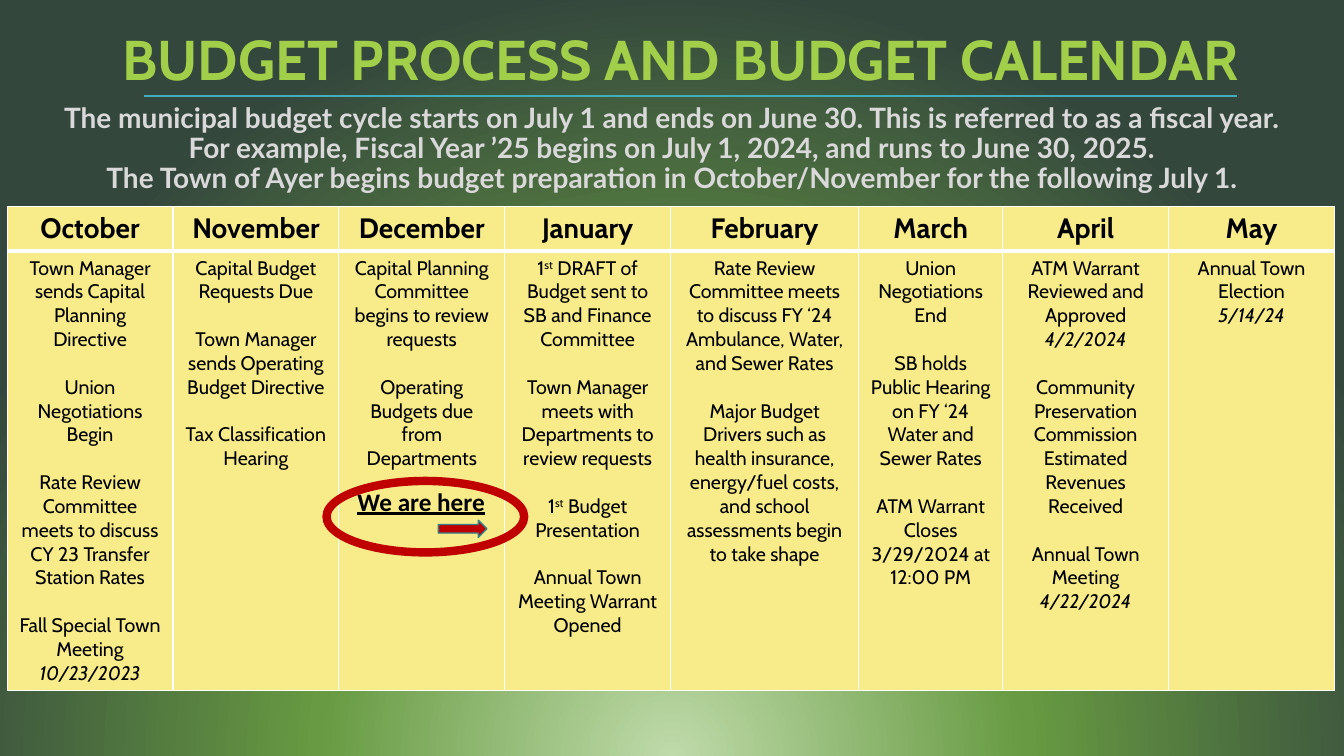
from itertools import product

from pptx import Presentation
from pptx.dml.color import RGBColor
from pptx.enum.shapes import MSO_CONNECTOR, MSO_SHAPE
from pptx.enum.text import MSO_ANCHOR, MSO_AUTO_SIZE, PP_ALIGN
from pptx.oxml import parse_xml
from pptx.oxml.ns import nsdecls
from pptx.util import Cm, Pt

HUES = {
    "glow": "BEDAA9", "leaf": "679A42", "dark": "34473D",
    "title": "A2CF49", "lead": "D9D9D9", "rule": "41AEBD",
    "cell": "F8EB89", "edge": "FFFFFF", "ink": "000000",
    "mark": "C00000", "trim": "30818C",
}
LEAD = [
    "The municipal budget cycle starts on July 1 and ends on June 30. This is referred to as a fiscal year.",
    "For example, Fiscal Year ’25 begins on July 1, 2024, and runs to June 30, 2025.",
    "The Town of Ayer begins budget preparation in October/November for the following July 1.",
]
# Month, column width in cm, steps. "^" encloses superscript, "|" starts an italic date line.
MONTHS = [
    ("October", 4.18, [
        "Town Manager sends Capital Planning Directive",
        "Union Negotiations Begin",
        "Rate Review Committee meets to discuss CY 23 Transfer Station Rates",
        "Fall Special Town Meeting|10/23/2023"]),
    ("November", 4.18, [
        "Capital Budget Requests Due",
        "Town Manager sends Operating Budget Directive",
        "Tax Classification Hearing"]),
    ("December", 4.18, [
        "Capital Planning Committee begins to review requests",
        "Operating Budgets due from Departments"]),
    ("January", 4.18, [
        "1^st^ DRAFT of Budget sent to SB and Finance Committee",
        "Town Manager meets with Departments to review requests",
        "1^st^ Budget Presentation",
        "Annual Town Meeting Warrant Opened"]),
    ("February", 4.74, [
        "Rate Review Committee meets to discuss FY ‘24 Ambulance, Water, and Sewer Rates",
        "Major Budget Drivers such as health insurance, energy/fuel costs, "
        "and school assessments begin to take shape"]),
    ("March", 3.63, [
        "Union Negotiations End",
        "SB holds Public Hearing on FY ‘24 Water and Sewer Rates",
        "ATM Warrant Closes 3/29/2024 at 12:00 PM"]),
    ("April", 4.18, [
        "ATM Warrant Reviewed and Approved|4/2/2024",
        "Community Preservation Commission Estimated Revenues Received",
        "Annual Town Meeting|4/22/2024"]),
    ("May", 4.18, ["Annual Town Election|5/14/24"]),
]


def tint(name):
    return RGBColor.from_string(HUES[name])


def place(shape, box):
    shape.left, shape.top, shape.width, shape.height = map(Cm, box)


def add_run(para, text, face, size, hue, bold=False):
    run = para.add_run()
    run.text = text
    font = run.font
    font.name, font.size, font.bold = face, Pt(size), bold
    font.color.rgb = tint(hue)
    return run


def paint(slide):
    """Fill the background with a round glow from below the slide."""
    stops = "".join(
        f'<a:gs pos="{pos}000"><a:srgbClr val="{HUES[name]}"/></a:gs>'
        for pos, name in ((0, "glow"), (46, "leaf"), (100, "dark")))
    slide._element.cSld.insert(0, parse_xml(
        f'<p:bg {nsdecls("p", "a")}><p:bgPr><a:gradFill rotWithShape="1">'
        f'<a:gsLst>{stops}</a:gsLst><a:path path="circle">'
        '<a:fillToRect l="50000" t="130000" r="50000" b="-30000"/></a:path>'
        '</a:gradFill><a:effectLst/></p:bgPr></p:bg>'))


def fill_holder(holder, box, lines, face, size, hue):
    """Set centred bold lines in a title or body placeholder."""
    place(holder, box)
    frame = holder.text_frame
    frame.word_wrap = True
    frame.auto_size = MSO_AUTO_SIZE.NONE
    frame.vertical_anchor = MSO_ANCHOR.TOP
    frame.margin_left = frame.margin_right = 0
    frame.margin_top = frame.margin_bottom = Cm(0.13)
    for num, line in enumerate(lines):
        para = frame.add_paragraph() if num else frame.paragraphs[0]
        props = para._p.get_or_add_pPr()
        props.set("marL", "0")
        props.set("indent", "0")
        props.append(parse_xml(f'<a:buNone {nsdecls("a")}/>'))
        para.alignment = PP_ALIGN.CENTER
        para.line_spacing = 0.9
        para.space_before = para.space_after = Pt(0)
        add_run(para, line, face, size, hue, True)


def add_rule(slide, left, top, width):
    rule = slide.shapes.add_connector(
        MSO_CONNECTOR.STRAIGHT, Cm(left), Cm(top), Cm(left + width), Cm(top))
    rule.line.color.rgb = tint("rule")
    rule.line.width = Pt(1.5)
    rule._element.spPr.append(parse_xml(f'<a:effectLst {nsdecls("a")}/>'))


def style_cell(cell, top, base):
    """Fill a cell and give it edges, with top and base widths in points."""
    cell.fill.solid()
    cell.fill.fore_color.rgb = tint("cell")
    props = cell._tc.get_or_add_tcPr()
    for num, (side, width) in enumerate(
            (("L", 1), ("R", 1), ("T", top), ("B", base))):
        props.insert(num, parse_xml(
            f'<a:ln{side} {nsdecls("a")} w="{Pt(width)}"><a:solidFill>'
            f'<a:srgbClr val="{HUES["edge"]}"/></a:solidFill></a:ln{side}>'))


def add_steps(frame, steps):
    for num, step in enumerate(steps):
        para = frame.add_paragraph() if num else frame.paragraphs[0]
        para.alignment = PP_ALIGN.CENTER
        if num:
            para.space_before = Pt(17)
        words, _, date = step.partition("|")
        for part, text in enumerate(words.split("^")):
            run = add_run(para, text, "Cabin", 14, "ink")
            if part % 2:
                run.font._element.set("baseline", "30000")
        if date:
            para.add_line_break()
            add_run(para, date, "Cabin", 14, "ink").font.italic = True


def add_calendar(slide, box):
    table = slide.shapes.add_table(2, len(MONTHS), *map(Cm, box)).table
    table.first_row = table.horz_banding = False
    head = 1.09
    table.rows[0].height, table.rows[1].height = Cm(head), Cm(box[3] - head)
    for row, col in product(range(2), range(len(MONTHS))):
        style_cell(table.cell(row, col), *((3, 1) if row else (1, 3)))
    for col, (month, width, steps) in enumerate(MONTHS):
        table.columns[col].width = Cm(width)
        para = table.cell(0, col).text_frame.paragraphs[0]
        para.alignment = PP_ALIGN.CENTER
        add_run(para, month, "Cabin", 20, "ink", True)
        add_steps(table.cell(1, col).text_frame, steps)


def add_marker(slide, box):
    """Circle the current point in the calendar, with label and arrow."""
    left, top, _, _ = box
    label = slide.shapes.add_textbox(
        Cm(left + 0.53), Cm(top), Cm(3.94), Cm(1.04))
    label.text_frame.word_wrap = True
    run = add_run(label.text_frame.paragraphs[0], "We are here",
                  "Calibri", 18, "ink", True)
    run.font.underline = True

    arrow = slide.shapes.add_shape(
        MSO_SHAPE.RIGHT_ARROW, Cm(left + 2.82), Cm(top + 0.99), Cm(1.22), Cm(0.43))
    arrow.fill.solid()
    arrow.fill.fore_color.rgb = tint("mark")
    ring = slide.shapes.add_shape(MSO_SHAPE.OVAL, *map(Cm, box))
    ring.fill.background()
    for shape, hue, width in ((arrow, "trim", 1), (ring, "mark", 6)):
        shape.shadow.inherit = False
        shape.line.color.rgb = tint(hue)
        shape.line.width = Pt(width)


def main():
    deck = Presentation()
    deck.slide_width, deck.slide_height = Cm(33.87), Cm(19.05)
    slide = deck.slides.add_slide(deck.slide_layouts[1])
    paint(slide)
    fill_holder(slide.shapes.title, (0.41, 0.69, 33.48, 1.75),
                ["BUDGET PROCESS AND BUDGET CALENDAR"], "Cabin", 40, "title")
    fill_holder(slide.placeholders[1], (0, 2.49, 33.87, 2.6),
                LEAD, "Lato", 20, "lead")
    add_rule(slide, 3.63, 2.41, 27.54)
    add_calendar(slide, (0.18, 5.21, 33.45, 12.01))
    add_marker(slide, (8.23, 12.12, 4.98, 1.8))
    deck.save("out.pptx")


if __name__ == "__main__":
    main()
